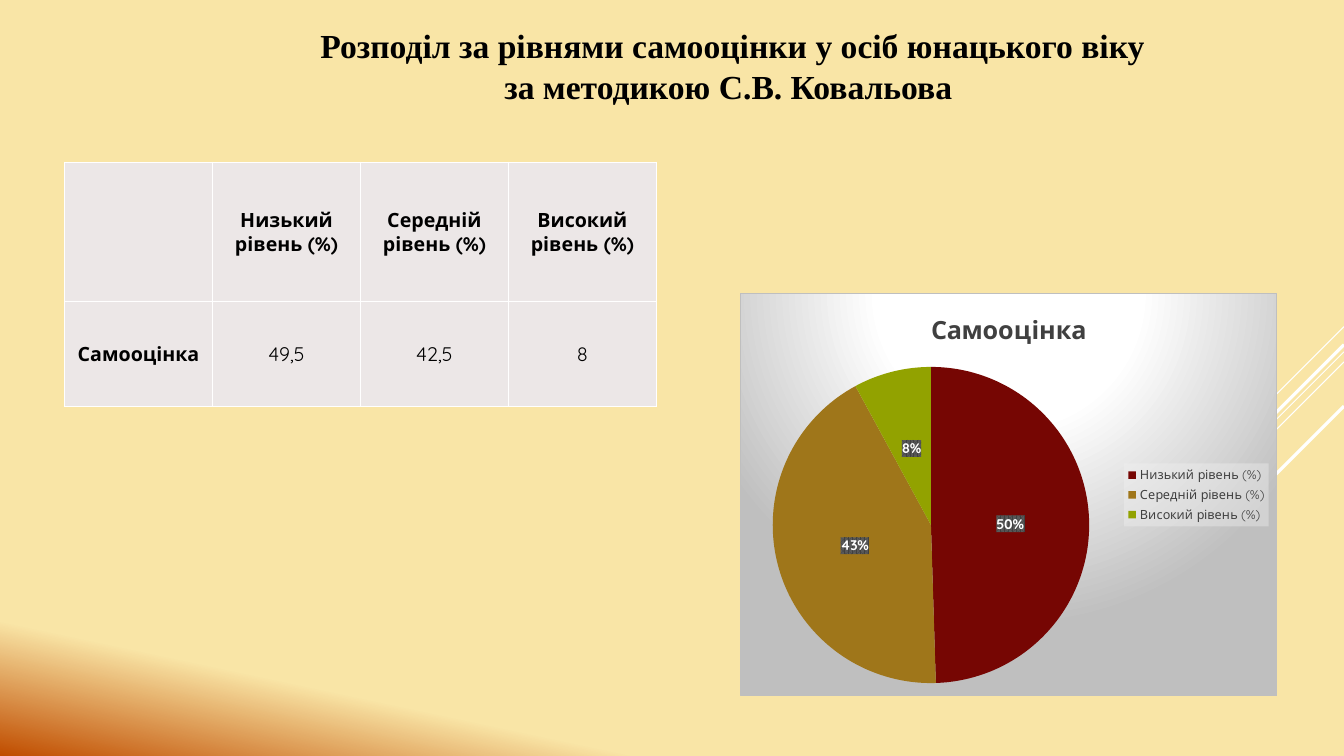
from lxml.etree import SubElement
from pptx import Presentation
from pptx.chart.data import CategoryChartData
from pptx.dml.color import RGBColor
from pptx.enum.chart import XL_CHART_TYPE, XL_LABEL_POSITION, XL_LEGEND_POSITION
from pptx.enum.shapes import MSO_CONNECTOR
from pptx.enum.text import MSO_ANCHOR, PP_ALIGN
from pptx.oxml import parse_xml
from pptx.oxml.ns import nsdecls, qn
from pptx.util import Inches, Pt

LEVELS = ["Низький рівень (%)", "Середній рівень (%)", "Високий рівень (%)"]
SLICE_COLORS = ["760603", "9F761A", "92A200"]
SHARES = ["49,5", "42,5", "8"]
ROUNDED_SHARES = [50, 43, 8]

CHART_FILL = """<a:gradFill rotWithShape="1"><a:gsLst>
<a:gs pos="0"><a:srgbClr val="FFFFFF"/></a:gs>
<a:gs pos="39000"><a:srgbClr val="FFFFFF"/></a:gs>
<a:gs pos="100000"><a:srgbClr val="BFBFBF"/></a:gs></a:gsLst>
<a:path path="circle"><a:fillToRect l="50000" t="-80000" r="50000" b="180000"/></a:path>
</a:gradFill><a:ln w="9525"><a:solidFill><a:srgbClr val="BFBFBF"/></a:solidFill></a:ln>"""
LEGEND_FILL = """<a:solidFill><a:srgbClr val="F2F2F2"><a:alpha val="39000"/></a:srgbClr></a:solidFill>"""
LABEL_FILL = """<a:pattFill prst="pct75"><a:fgClr><a:srgbClr val="404040"/></a:fgClr>
<a:bgClr><a:srgbClr val="595959"/></a:bgClr></a:pattFill>"""
PIE_LAYOUT = {"x": 0.06, "y": 0.18, "w": 0.59, "h": 0.79}


def color(value):
    return RGBColor.from_string(value)


def set_font(font, size, value, bold=False, name="Quicksand"):
    font.size = Pt(size)
    font.bold = bold
    font.name = name
    font.color.rgb = color(value)


def add_chart_style(element, content):
    """Put shape properties just before the text properties of a chart part."""
    properties = parse_xml(f'<c:spPr {nsdecls("c", "a")}>{content}</c:spPr>')
    element.find(qn("c:txPr")).addprevious(properties)


class SlideBuilder:
    def __init__(self, slide):
        self.slide = slide

    def background(self, start, end, start_position, angle):
        fill = self.slide.background.fill
        fill.gradient()
        fill.gradient_angle = 360 - angle
        for stop, value, position in zip(fill.gradient_stops, (start, end), (start_position, 1)):
            stop.color.rgb = color(value)
            stop.position = position

    def line(self, x1, y1, x2, y2, width):
        connector = self.slide.shapes.add_connector(
            MSO_CONNECTOR.STRAIGHT, Inches(x1), Inches(y1), Inches(x2), Inches(y2))
        connector.line.color.rgb = color("FFFFFF")
        connector.line.width = Pt(width)
        SubElement(connector._element.spPr, qn("a:effectLst"))

    def title(self, text, left, top, width, height):
        box = self.slide.shapes.add_textbox(
            Inches(left), Inches(top), Inches(width), Inches(height))
        box.text_frame.word_wrap = True
        paragraph = box.text_frame.paragraphs[0]
        paragraph.text = text
        paragraph.alignment = PP_ALIGN.CENTER
        set_font(paragraph.font, 24, "000000", True, "Times New Roman")

    def table(self, rows, left, top, width, row_heights):
        table = self.slide.shapes.add_table(
            len(rows), len(rows[0]), Inches(left), Inches(top),
            Inches(width), Inches(sum(row_heights))).table
        for row, height in zip(table.rows, row_heights):
            row.height = Inches(height)
        for i, texts in enumerate(rows):
            for j, text in enumerate(texts):
                self.cell(table.cell(i, j), text, bold=i == 0 or j == 0)

    def cell(self, cell, text, bold):
        cell.vertical_anchor = MSO_ANCHOR.MIDDLE
        cell.margin_left = cell.margin_right = cell.margin_top = Inches(0.01)
        cell.margin_bottom = 0
        properties = cell._tc.get_or_add_tcPr()
        for side in ("lnL", "lnR", "lnT", "lnB"):
            border = SubElement(properties, qn(f"a:{side}"), w=str(Pt(1)))
            fill = SubElement(border, qn("a:solidFill"))
            SubElement(fill, qn("a:srgbClr"), val="FFFFFF")
        cell.fill.solid()
        cell.fill.fore_color.rgb = color("ECE7E7")
        paragraph = cell.text_frame.paragraphs[0]
        paragraph.text = text
        paragraph.alignment = PP_ALIGN.CENTER
        set_font(paragraph.font, 14, "000000", bold)

    def pie(self, title, categories, values, colors, left, top, width, height):
        data = CategoryChartData()
        data.categories = categories
        data.add_series(title, values)
        chart = self.slide.shapes.add_chart(
            XL_CHART_TYPE.PIE, Inches(left), Inches(top),
            Inches(width), Inches(height), data).chart
        set_font(chart.font, 10, "FFFFFF")
        add_chart_style(chart._chartSpace, CHART_FILL)

        # Chart title
        chart.has_title = True
        paragraph = chart.chart_title.text_frame.paragraphs[0]
        paragraph.text = title
        set_font(paragraph.font, 18, "404040", True)
        chart.chart_title.include_in_layout = False

        # Legend
        chart.has_legend = True
        legend = chart.legend
        legend.position = XL_LEGEND_POSITION.RIGHT
        legend.include_in_layout = False
        set_font(legend.font, 9, "404040")
        add_chart_style(legend._element, LEGEND_FILL)

        # Slices and their labels
        plot = chart.plots[0]
        plot.vary_by_categories = True
        for index, value in enumerate(colors):
            fill = plot.series[0].points[index].format.fill
            fill.solid()
            fill.fore_color.rgb = color(value)
        labels = plot.series[0].data_labels
        set_font(labels.font, 10, "FFFFFF", True)
        labels.show_percentage = True
        labels.show_value = False
        labels.show_legend_key = False
        labels.number_format = "0%"
        labels.number_format_is_linked = False
        labels.position = XL_LABEL_POSITION.CENTER
        add_chart_style(labels._element, LABEL_FILL)

        # Place of the pie inside the chart
        plot_area = chart._chartSpace.chart.plotArea
        for layout in plot_area.findall(qn("c:layout")):
            plot_area.remove(layout)
        modes = '<c:layoutTarget val="inner"/><c:xMode val="edge"/><c:yMode val="edge"/>'
        sizes = "".join(f'<c:{key} val="{value}"/>' for key, value in PIE_LAYOUT.items())
        plot_area.insert(0, parse_xml(
            f'<c:layout {nsdecls("c")}><c:manualLayout>{modes}{sizes}</c:manualLayout></c:layout>'))


def main():
    presentation = Presentation()
    presentation.slide_width = Inches(13.33)
    presentation.slide_height = Inches(7.5)
    builder = SlideBuilder(presentation.slides.add_slide(presentation.slide_layouts[6]))
    builder.background("F9E5A6", "C04D00", 0.87, 102)

    # Diagonal lines that run down from the right edge at 45 degrees
    for top, length, width in [(3.24, 1, 0.75), (3.49, 3.26, 0.75), (3.59, 2.07, 0.75),
                               (3.42, 1.91, 2.25), (4.03, 1.39, 2.25)]:
        builder.line(13.33, top, 13.33 - length, top + length, width)

    # Chart, table and title
    builder.pie("Самооцінка", LEVELS, ROUNDED_SHARES, SLICE_COLORS, 7.34, 2.91, 5.33, 4)
    builder.table([["", *LEVELS], ["Самооцінка", *SHARES]], 0.64, 1.61, 5.87, [1.38, 1.04])
    builder.title("Розподіл за рівнями самооцінки у осіб юнацького віку "
                  "за методикою С.В. Ковальова ", 3.06, 0.2, 8.41, 0.91)
    presentation.save("out.pptx")


if __name__ == "__main__":
    main()
